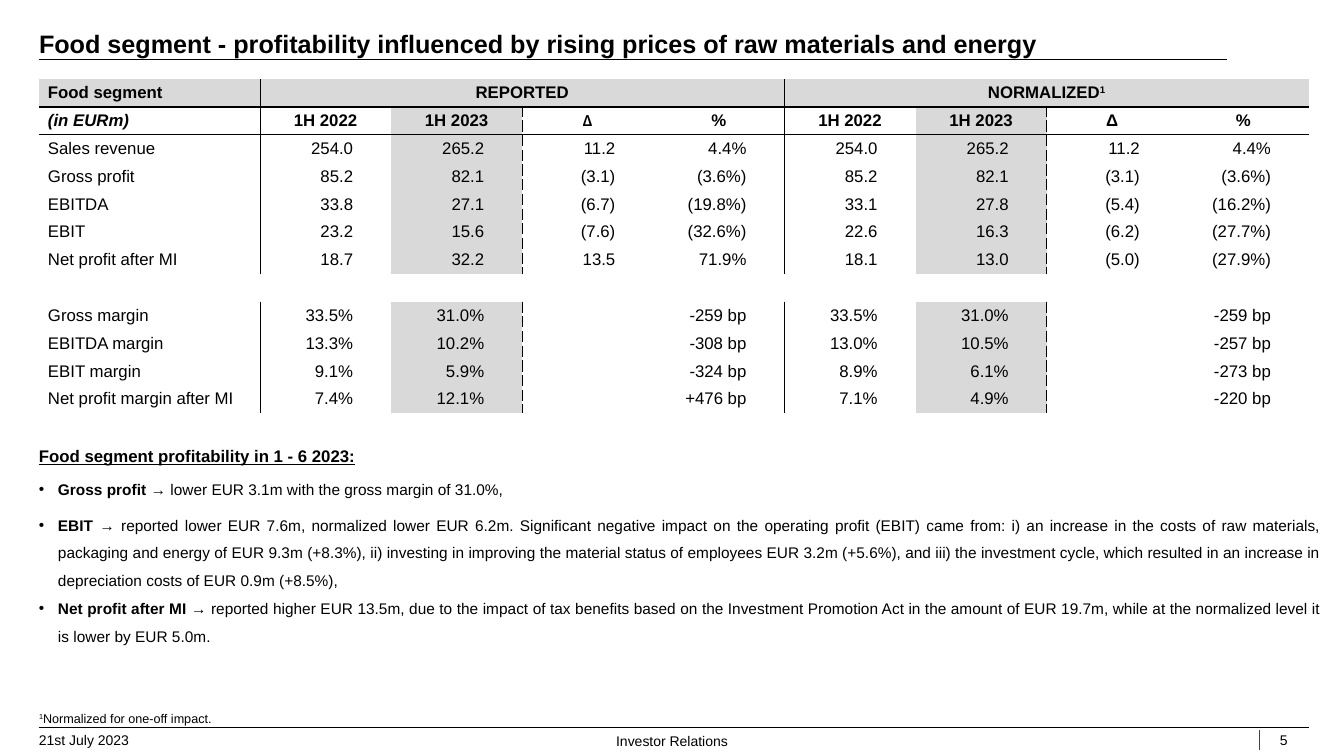
"""Build the food segment profitability slide."""
from dataclasses import dataclass

from lxml.etree import SubElement
from pptx import Presentation
from pptx.dml.color import RGBColor
from pptx.enum.shapes import MSO_CONNECTOR
from pptx.enum.text import MSO_ANCHOR, PP_ALIGN
from pptx.oxml.ns import qn
from pptx.util import Pt

SCALE = 914400 / 100.8
SLIDE_SIZE = (1344, 756)
TITLE = "Food segment - profitability influenced by rising prices of raw materials and energy"
DATE, DEPARTMENT, PAGE = "21st July 2023", "Investor Relations", "5"
FOOTNOTE = "Normalized for one-off impact."

GROUPS = ["Food segment", "REPORTED", "", "", "", "NORMALIZED", "", "", ""]
MEASURES = ["1H 2022", "1H 2023", "Δ", "%"]
RESULTS = [
    ["Sales revenue", "254.0", "265.2", "11.2", "4.4%", "254.0", "265.2", "11.2", "4.4%"],
    ["Gross profit", "85.2", "82.1", "(3.1)", "(3.6%)", "85.2", "82.1", "(3.1)", "(3.6%)"],
    ["EBITDA", "33.8", "27.1", "(6.7)", "(19.8%)", "33.1", "27.8", "(5.4)", "(16.2%)"],
    ["EBIT", "23.2", "15.6", "(7.6)", "(32.6%)", "22.6", "16.3", "(6.2)", "(27.7%)"],
    ["Net profit after MI", "18.7", "32.2", "13.5", "71.9%", "18.1", "13.0", "(5.0)", "(27.9%)"],
]
MARGINS = [
    ["Gross margin", "33.5%", "31.0%", "", "-259 bp", "33.5%", "31.0%", "", "-259 bp"],
    ["EBITDA margin", "13.3%", "10.2%", "", "-308 bp", "13.0%", "10.5%", "", "-257 bp"],
    ["EBIT margin", "9.1%", "5.9%", "", "-324 bp", "8.9%", "6.1%", "", "-273 bp"],
    ["Net profit margin after MI", "7.4%", "12.1%", "", "+476 bp", "7.1%", "4.9%", "", "-220 bp"],
]
ROWS = [GROUPS, ["(in EURm)"] + MEASURES * 2] + RESULTS + [[""] * 9] + MARGINS
SEPARATOR_ROW = 2 + len(RESULTS)

COMMENTARY_TITLE = "Food segment profitability in 1 - 6 2023:"
COMMENTARY = [
    ("Gross profit ", "→ lower EUR 3.1m with the gross margin of 31.0%,", 6),
    ("EBIT ", "→ reported lower EUR 7.6m, normalized lower EUR 6.2m. Significant negative impact on "
     "the operating profit (EBIT) came from: i) an increase in the costs of raw materials, packaging "
     "and energy of EUR 9.3m (+8.3%), ii) investing in improving the material status of employees "
     "EUR 3.2m (+5.6%), and iii) the investment cycle, which resulted in an increase in depreciation "
     "costs of EUR 0.9m (+8.5%),", 0),
    ("Net profit after MI ", "→ reported higher EUR 13.5m, due to the impact of tax benefits based on "
     "the Investment Promotion Act in the amount of EUR 19.7m, while at the normalized level it is "
     "lower by EUR 5.0m.", 0),
]

LEFT, RIGHT = 39, 1309
TABLE_TOP, TABLE_HEIGHT, LABEL_WIDTH = 79, 334, 221
LABEL_INSET, VALUE_INSET, BULLET_INDENT = 9, 38, 19
RULES = [
    (LEFT, 59, 1227, 59, "ink"),
    (LEFT, 727, RIGHT, 727, "ink"),
    (1259, 730, 1259, 750, "divider"),
]


@dataclass(frozen=True)
class Theme:
    """Colours, fonts and type sizes."""
    ink: str = "000000"
    divider: str = "404040"
    shade: str = "D9D9D9"
    font: str = "Arial"
    delta_font: str = "Calibri"
    title: int = 18
    heading: int = 12
    body: int = 11
    footer: int = 10
    note: int = 9
    thin: float = 0.5
    thick: float = 2


THEME = Theme()


def px(length):
    """Turn px into EMU."""
    return round(length * SCALE)


def add_run(paragraph, text, size, bold=False, font=THEME.font, raised=False):
    """Add one styled run and return it."""
    run = paragraph.add_run()
    run.text = text
    run.font.name, run.font.size, run.font.bold = font, Pt(size), bold
    run.font.color.rgb = RGBColor.from_string(THEME.ink)
    if raised:
        run.font._element.set("baseline", "30000")
    return run


def add_text_box(slide, box, insets=(0, 0, 0, 0), anchor=MSO_ANCHOR.TOP):
    """Add an empty wrapped text box and return its text frame."""
    frame = slide.shapes.add_textbox(*map(px, box)).text_frame
    frame.word_wrap, frame.vertical_anchor = True, anchor
    frame.margin_left, frame.margin_top, frame.margin_right, frame.margin_bottom = map(px, insets)
    return frame


def add_rule(slide, x1, y1, x2, y2, color):
    """Add a thin straight line."""
    line = slide.shapes.add_connector(MSO_CONNECTOR.STRAIGHT, *map(px, (x1, y1, x2, y2)))
    line.line.color.rgb = RGBColor.from_string(getattr(THEME, color))
    line.line.width = Pt(THEME.thin)
    SubElement(line._element.spPr, qn("a:effectLst"))


def vertical_border(row, edge):
    """Give width and dash of the border at a column edge."""
    if row == SEPARATOR_ROW:
        return None
    if edge in (1, 5):
        return THEME.thin, "solid"
    return (THEME.thin, "dash") if edge in (3, 7) and row else None


def horizontal_border(edge):
    """Give width and dash of the border at a row edge."""
    return {1: (THEME.thick, "solid"), 2: (THEME.thin, "solid")}.get(edge)


def set_borders(cell, row, column):
    """Draw the four borders of a cell."""
    borders = {"a:lnL": vertical_border(row, column), "a:lnR": vertical_border(row, column + 1),
               "a:lnT": horizontal_border(row), "a:lnB": horizontal_border(row + 1)}
    properties = cell._tc.get_or_add_tcPr()
    for tag, border in borders.items():
        line = SubElement(properties, qn(tag))
        if border is None:
            SubElement(line, qn("a:noFill"))
            continue
        width, dash = border
        line.set("w", str(Pt(width)))
        SubElement(SubElement(line, qn("a:solidFill")), qn("a:srgbClr"), val=THEME.ink)
        SubElement(line, qn("a:prstDash"), val=dash)


def fill_cell(cell, row, column, text):
    """Style one table cell and write its text."""
    header = row < 2
    cell.vertical_anchor = MSO_ANCHOR.MIDDLE
    cell.margin_top = cell.margin_bottom = 0
    cell.margin_left = 0 if column else px(LABEL_INSET)
    cell.margin_right = px(VALUE_INSET) if column and not header else 0
    set_borders(cell, row, column)
    if row == 0 or (column in (2, 6) and row != SEPARATOR_ROW):
        cell.fill.solid()
        cell.fill.fore_color.rgb = RGBColor.from_string(THEME.shade)
    else:
        cell.fill.background()
    paragraph = cell.text_frame.paragraphs[0]
    if not text:
        SubElement(paragraph._p, qn("a:endParaRPr"), sz=str(THEME.heading * 100))
        return
    if column:
        paragraph.alignment = PP_ALIGN.CENTER if header else PP_ALIGN.RIGHT
    font = THEME.delta_font if (row, column) == (1, 3) else THEME.font
    run = add_run(paragraph, text, THEME.heading, header, font)
    run.font.italic = (row, column) == (1, 0)
    if (row, column) == (0, 5):
        add_run(paragraph, "1", THEME.heading, True, raised=True)


def add_results_table(slide):
    """Add the table of reported and normalized results."""
    box = map(px, (LEFT, TABLE_TOP, RIGHT - LEFT, TABLE_HEIGHT))
    table = slide.shapes.add_table(len(ROWS), len(GROUPS), *box).table
    table.first_row = table.horz_banding = False
    value_width = (RIGHT - LEFT - LABEL_WIDTH) / (len(GROUPS) - 1)
    for index, column in enumerate(table.columns):
        column.width = px(value_width if index else LABEL_WIDTH)
    for row, texts in enumerate(ROWS):
        table.rows[row].height = px(TABLE_HEIGHT / len(ROWS))
        for column, text in enumerate(texts):
            fill_cell(table.cell(row, column), row, column, text)
    for start in (1, 5):
        table.cell(0, start).merge(table.cell(0, start + 3))


def add_commentary(slide):
    """Add the underlined heading and the bullets below the table."""
    frame = add_text_box(slide, (LEFT, 436, 1283, 234))
    heading = frame.paragraphs[0]
    heading.space_after = Pt(3)
    add_run(heading, COMMENTARY_TITLE, THEME.heading, True).font.underline = True
    for lead, text, space_after in COMMENTARY:
        paragraph = frame.add_paragraph()
        paragraph.space_after = Pt(space_after)
        properties = paragraph._p.get_or_add_pPr()
        properties.set("marL", str(px(BULLET_INDENT)))
        properties.set("indent", str(-px(BULLET_INDENT)))
        SubElement(properties, qn("a:buFont"), typeface=THEME.font)
        SubElement(properties, qn("a:buChar"), char="•")
        add_run(paragraph, lead, THEME.body, True)
        add_run(paragraph, text, THEME.body)
    for paragraph in frame.paragraphs:
        paragraph.alignment, paragraph.line_spacing = PP_ALIGN.JUSTIFY, 1.5


def main():
    """Assemble and save the slide."""
    presentation = Presentation()
    presentation.slide_width, presentation.slide_height = map(px, SLIDE_SIZE)
    slide = presentation.slides.add_slide(presentation.slide_layouts[6])
    for rule in RULES:
        add_rule(slide, *rule)
    side, padded = (0, 5, 10, 5), (10, 5, 10, 5)
    title = add_text_box(slide, (LEFT, 20, 1271, 46), side, MSO_ANCHOR.MIDDLE)
    add_run(title.paragraphs[0], TITLE, THEME.title, True)
    add_results_table(slide)
    add_commentary(slide)
    note = add_text_box(slide, (LEFT, 711, 1002, 15)).paragraphs[0]
    add_run(note, "1", THEME.note, raised=True)
    add_run(note, FOOTNOTE, THEME.note)
    date = add_text_box(slide, (LEFT, 726, 302, 28), side, MSO_ANCHOR.MIDDLE)
    add_run(date.paragraphs[0], DATE, THEME.footer)
    department = add_text_box(slide, (587, 728, 170, 26), padded).paragraphs[0]
    department.alignment = PP_ALIGN.CENTER
    add_run(department, DEPARTMENT, THEME.footer)
    page = add_text_box(slide, (1270, 727, 74, 29), padded)
    add_run(page.paragraphs[0], PAGE, THEME.footer)
    presentation.save("out.pptx")


if __name__ == "__main__":
    main()
